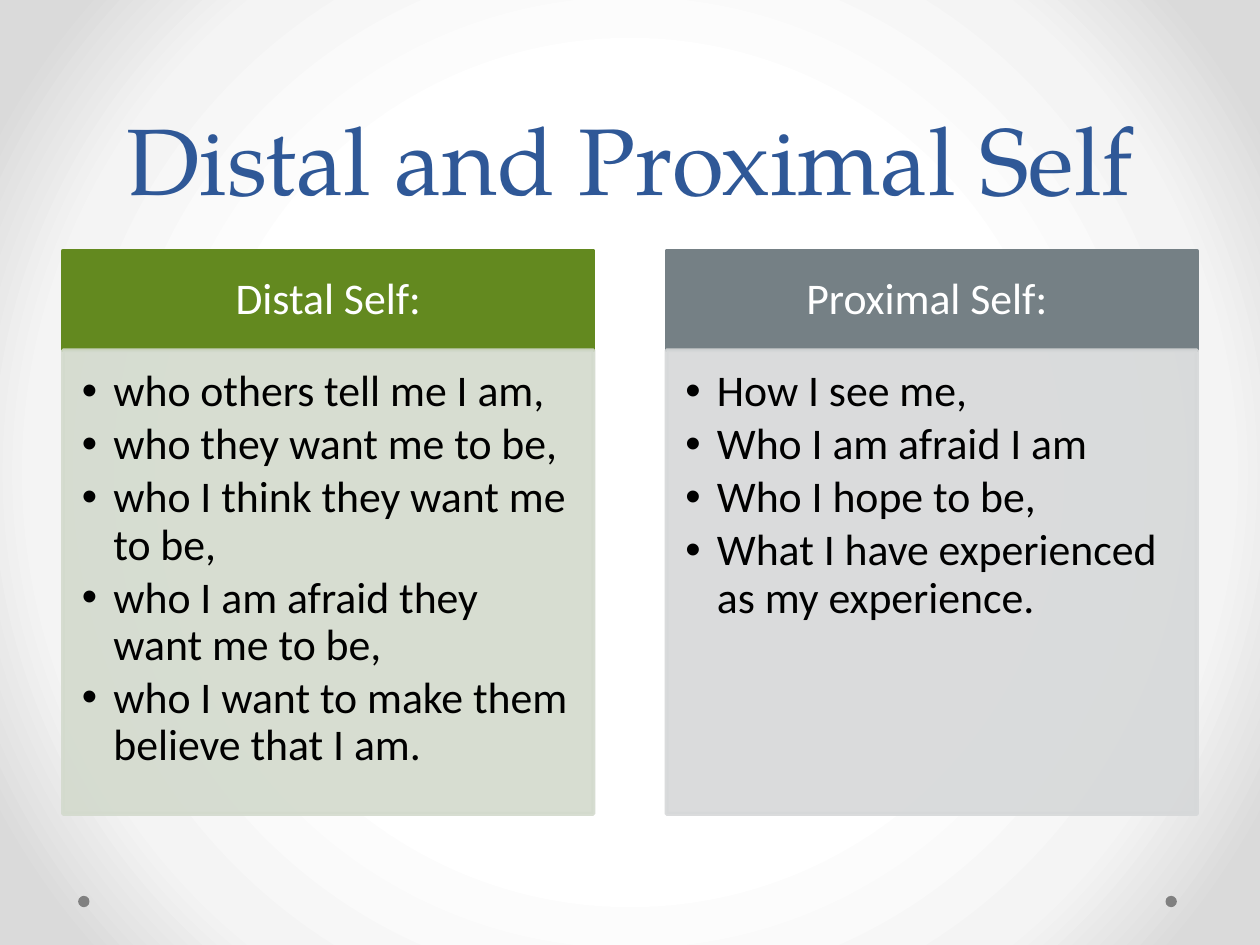
from lxml import etree
from pptx import Presentation
from pptx.dml.color import RGBColor
from pptx.enum.shapes import MSO_SHAPE
from pptx.enum.text import MSO_ANCHOR, MSO_AUTO_SIZE, PP_ALIGN
from pptx.oxml.ns import qn
from pptx.util import Inches, Pt

CENTER, LEFT = PP_ALIGN.CENTER, PP_ALIGN.LEFT
TOP, MIDDLE, BOTTOM = MSO_ANCHOR.TOP, MSO_ANCHOR.MIDDLE, MSO_ANCHOR.BOTTOM
NO_FIT = MSO_AUTO_SIZE.NONE
OVAL = MSO_SHAPE.OVAL
COMPARISON_LAYOUT = 4

TITLE = "Distal and Proximal Self"
COLUMNS = [
    {"heading": "Distal Self:", "dark": "63891F", "pale": "D3DACD",
     "points": ["who others tell me I am,",
                "who they want me to be,",
                "who I think they want me to be,",
                "who I am afraid they want me to be,",
                "who I want to make them believe that I am."]},
    {"heading": "Proximal Self: ", "dark": "758085", "pale": "D6D8D9",
     "points": ["How I see me,",
                "Who I am afraid I am",
                "Who I hope to be,",
                "What I have experienced as my experience."]},
]
BACKDROP_STOPS = [(50, "FFFFFF"), (76, "F4F4F4"), (92, "DADADA")]

MARGIN, COLUMN_WIDTH, COLUMN_STEP = 0.5, 4.21, 4.79
HEADING_TOP, HEADING_HEIGHT, POINTS_HEIGHT = 1.99, 0.79, 3.68
DOT_LEFTS, DOT_TOP, DOT_SIZE = (9.25, 0.62), 7.11, 0.09


def rgb(value):
    return RGBColor.from_string(value)


def place(shape, left, top, width, height):
    shape.left, shape.top = Inches(left), Inches(top)
    shape.width, shape.height = Inches(width), Inches(height)


def paint(shape, color, opacity=100):
    shape.fill.solid()
    shape.fill.fore_color.rgb = rgb(color)
    shape.line.color.rgb = rgb(color)
    shape.line.width = Pt(2.25)
    if opacity < 100:
        for swatch in shape.element.spPr.iter(qn("a:srgbClr")):
            etree.SubElement(swatch, qn("a:alpha"), val=str(opacity * 1000))


def write(shape, lines, size=25, font="Calibri", color="000000", align=LEFT,
          anchor=TOP, insets=(0.1, 0.05, 0.1, 0.05), spacing=0.9, after=0,
          bullet=False):
    frame = shape.text_frame
    frame.text = "\n".join(lines)
    frame.word_wrap, frame.auto_size = True, NO_FIT
    frame.vertical_anchor = anchor
    (frame.margin_left, frame.margin_top,
     frame.margin_right, frame.margin_bottom) = map(Inches, insets)
    for paragraph in frame.paragraphs:
        paragraph.alignment, paragraph.line_spacing = align, spacing
        paragraph.space_before, paragraph.space_after = Pt(0), Pt(after)
        run_font = paragraph.runs[0].font
        run_font.size, run_font.name, run_font.bold = Pt(size), font, False
        run_font.color.rgb = rgb(color)
        if bullet:
            properties = paragraph._p.get_or_add_pPr()
            properties.set("marL", str(Inches(0.25)))
            properties.set("indent", str(-Inches(0.25)))
            etree.SubElement(properties, qn("a:buFont"), typeface="Arial")
            etree.SubElement(properties, qn("a:buChar"), char="•")


def add_backdrop(slide):
    slide.background.fill.gradient()
    gradient = next(slide.element.iter(qn("a:gradFill")))
    for child in list(gradient):
        gradient.remove(child)
    stops = etree.SubElement(gradient, qn("a:gsLst"))
    for position, color in BACKDROP_STOPS:
        stop = etree.SubElement(stops, qn("a:gs"), pos=str(position * 1000))
        etree.SubElement(stop, qn("a:srgbClr"), val=color)
    circle = etree.SubElement(gradient, qn("a:path"))
    circle.set("path", "circle")
    etree.SubElement(circle, qn("a:fillToRect"),
                     {side: "50000" for side in "ltrb"})


def add_dot(slide, left):
    dot = slide.shapes.add_shape(OVAL, Inches(left), Inches(DOT_TOP),
                                 Inches(DOT_SIZE), Inches(DOT_SIZE))
    dot.shadow.inherit = False
    dot.fill.solid()
    dot.fill.fore_color.rgb = rgb("808080")
    dot.line.fill.background()


def add_column(slide, index, column):
    heading = slide.placeholders[1 + 2 * index]
    points = slide.placeholders[2 + 2 * index]
    left = MARGIN + index * COLUMN_STEP
    place(heading, left, HEADING_TOP, COLUMN_WIDTH, HEADING_HEIGHT)
    paint(heading, column["dark"])
    write(heading, [column["heading"]], color="FFFFFF", align=CENTER,
          anchor=MIDDLE, insets=(0.19, 0.11, 0.19, 0.11))
    place(points, left, HEADING_TOP + HEADING_HEIGHT, COLUMN_WIDTH, POINTS_HEIGHT)
    paint(points, column["pale"], opacity=90)
    write(points, column["points"], insets=(0.15, 0.15, 0.19, 0.22),
          after=3.3, bullet=True)


def main():
    """Build the slide that compares the distal and the proximal self."""
    deck = Presentation()
    deck.slide_width, deck.slide_height = Inches(10), Inches(7.5)
    slide = deck.slides.add_slide(deck.slide_layouts[COMPARISON_LAYOUT])
    add_backdrop(slide)
    for left in DOT_LEFTS:
        add_dot(slide, left)
    title = slide.shapes.title
    place(title, MARGIN, 0, 9, 1.75)
    write(title, [TITLE], size=54, font="TeX Gyre Pagella", color="2F5897",
          align=CENTER, anchor=BOTTOM, spacing=Pt(58))
    for index, column in enumerate(COLUMNS):
        add_column(slide, index, column)
    deck.save("out.pptx")


if __name__ == "__main__":
    main()
